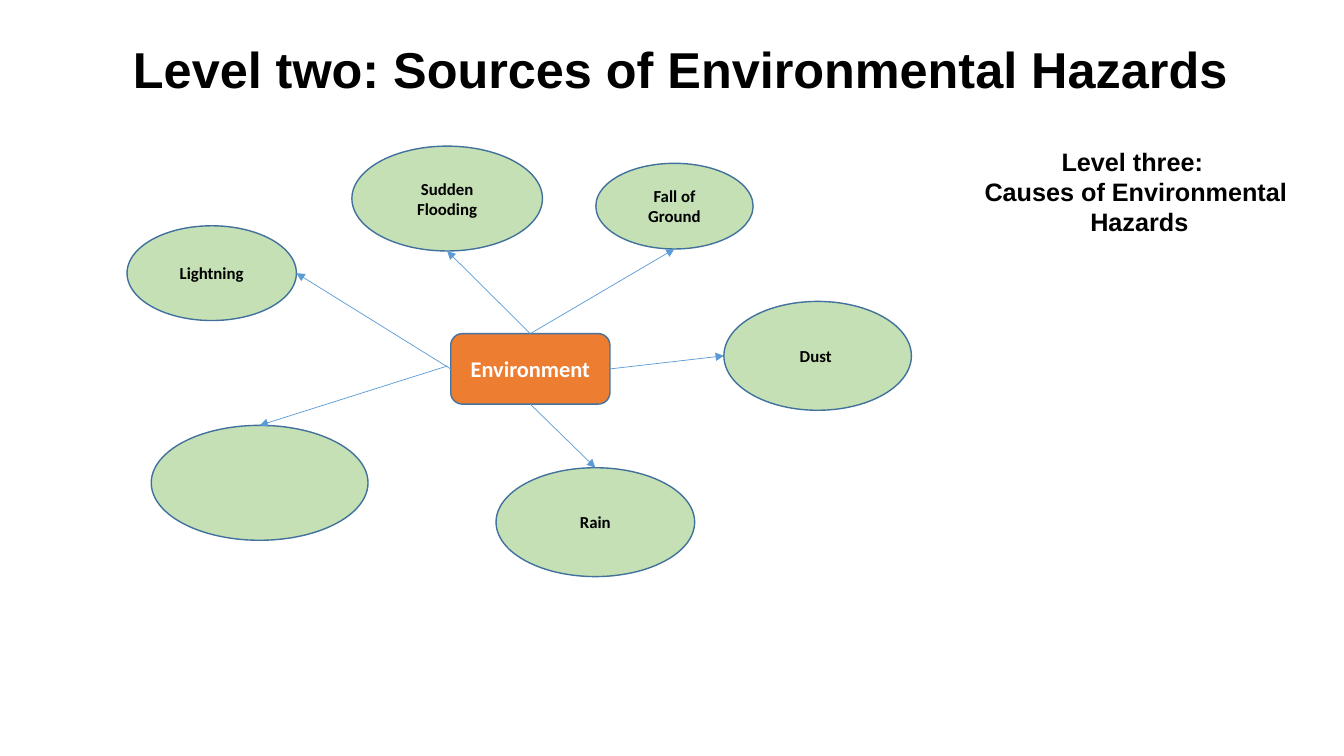
from lxml.etree import SubElement
from pptx import Presentation
from pptx.dml.color import RGBColor
from pptx.enum.shapes import MSO_CONNECTOR as Link, MSO_SHAPE as Kind
from pptx.enum.text import MSO_ANCHOR as Anchor, PP_ALIGN as Align
from pptx.oxml.ns import qn
from pptx.util import Inches, Pt

WIDE, HIGH = 13.33, 7.5
TITLE = "Level two: Sources of Environmental Hazards"
CAUSES = ["Level three: ", "Causes of Environmental", " Hazards"]
HUB = ("Environment", (4.47, 3.31, 1.58, 0.7))
# text, box, side of the hub, side of the source
SOURCES = [
    ("Fall of Ground", (5.91, 1.62, 1.56, 0.85), "top", "bottom"),
    ("", (1.5, 4.22, 2.15, 1.14), None, "top"),
    ("Sudden Flooding", (3.49, 1.45, 1.89, 1.04), "top", "bottom"),
    ("Lightning", (1.26, 2.24, 1.68, 0.94), "left", "right"),
    ("Dust ", (7.18, 2.99, 1.86, 1.08), "right", "left"),
    ("Rain", (4.92, 4.64, 1.97, 1.08), "bottom", "top"),
]
LOOSE = (4.44, 3.63)
SITES = {"top": 0, "left": 1, "bottom": 2, "right": 3}
SHARES = {"top": (0.5, 0), "left": (0, 0.5), "bottom": (0.5, 1), "right": (1, 0.5)}

HUB_FONT = dict(size=Pt(16), name="Calibri", bold=True)
SOURCE_FONT = dict(size=Pt(12), name="Calibri", bold=True)
TITLE_FONT = dict(size=Pt(36), name="Arial", bold=True)
CAUSE_FONT = dict(size=Pt(18), name="Arial", bold=True)


def color(part, value):
    part.rgb = RGBColor.from_string(value)


def write(shape, lines, look, ink):
    frame = shape.text_frame
    frame.word_wrap = True
    for i, line in enumerate(lines):
        para = frame.paragraphs[0] if i == 0 else frame.add_paragraph()
        para.alignment = Align.CENTER
        run = para.add_run()
        run.text = line
        for key, value in look.items():
            setattr(run.font, key, value)
        color(run.font.color, ink)
    return frame


def node(kind, box, text, fill, edge, look, ink):
    shape = slide.shapes.add_shape(kind, *map(Inches, box))
    shape.shadow.inherit = False
    shape.fill.solid()
    color(shape.fill.fore_color, fill)
    color(shape.line.color, edge)
    shape.line.width = Pt(1)
    if text:
        write(shape, [text], look, ink).vertical_anchor = Anchor.MIDDLE
    return shape


def middle(box, side):
    """Point at the middle of one side of a box."""
    left, top, width, height = box
    across, down = SHARES[side]
    return left + across * width, top + down * height


def arrow(hub, start, oval, end):
    """Arrow to an oval; only its top site has the same number as a rectangle's."""
    first = middle(HUB[1], start) if start else LOOSE
    last = middle(oval[1], end)
    line = slide.shapes.add_connector(Link.STRAIGHT, *map(Inches, first + last))
    if start:
        line.begin_connect(hub, SITES[start])
    if end == "top":
        line.end_connect(oval[0], SITES[end])
    color(line.line.color, "5B9BD5")
    line.line.width = Pt(0.5)
    SubElement(line.line._get_or_add_ln(), qn("a:tailEnd"), type="triangle")
    SubElement(line._element.spPr, qn("a:effectLst"))


deck = Presentation()
deck.slide_width, deck.slide_height = Inches(WIDE), Inches(HIGH)
slide = deck.slides.add_slide(deck.slide_layouts[6])

hub = node(Kind.ROUNDED_RECTANGLE, HUB[1], HUB[0], "ED7D31", "43739E", HUB_FONT, "FFFFFF")
ovals = [node(Kind.OVAL, box, text, "C5E0B4", "41719C", SOURCE_FONT, "000000")
         for text, box, start, end in SOURCES]
for oval, (text, box, start, end) in zip(ovals, SOURCES):
    arrow(hub, start, (oval, box), end)

for box, lines, look, inset in [
    ((0.44, 0.33, 12.43, 0.71), [TITLE], TITLE_FONT, 0.29),
    ((8.67, 1.4, 5.19, 1.01), CAUSES, CAUSE_FONT, 0.1),
]:
    label = slide.shapes.add_textbox(*map(Inches, box))
    write(label, lines, look, "000000").margin_left = Inches(inset)

deck.save("out.pptx")
